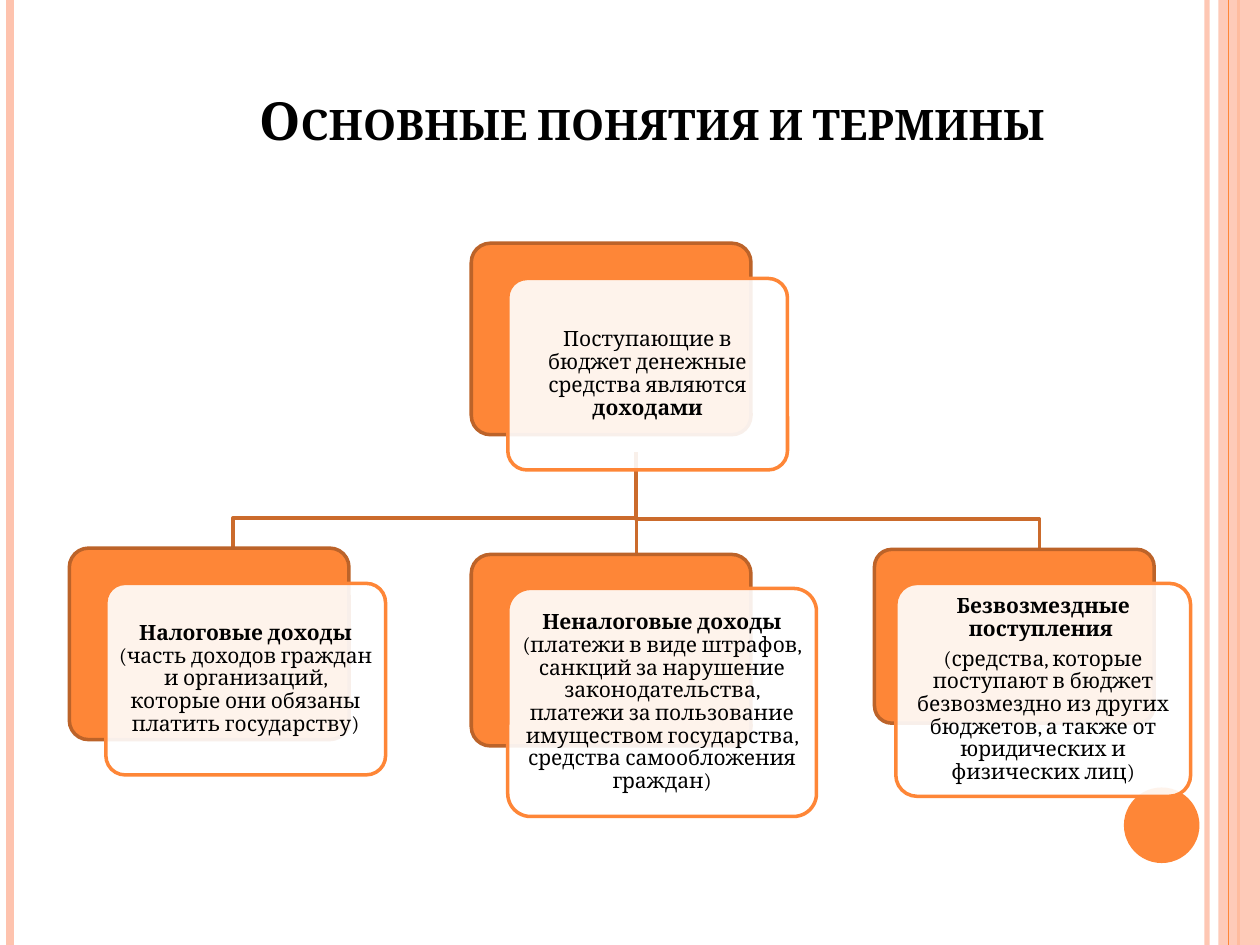
from lxml import etree
from pptx import Presentation
from pptx.dml.color import RGBColor
from pptx.enum.shapes import MSO_CONNECTOR, MSO_SHAPE
from pptx.enum.text import MSO_ANCHOR as Anchor, PP_ALIGN as Align
from pptx.oxml.ns import qn
from pptx.util import Inches, Pt

ORANGE, PEACH, WHITE, BLACK = "FE8637", "FEC3AE", "FFFFFF", "000000"
BACK_EDGE, BRANCH = "BC6329", "CB6B2C"
FONT = "Cambria"


def paint(color_format, color, opacity=100):
    """Set a solid fill or line colour; opacity is in percent."""
    color_format.solid()
    color_format.fore_color.rgb = RGBColor.from_string(color)
    if opacity < 100:
        solid = color_format.fore_color._xFill
        etree.SubElement(solid[0], qn("a:alpha")).set("val", str(opacity * 1000))


def add_block(slide, kind, box, fill, opacity=100, edge=None):
    block = slide.shapes.add_shape(kind, *map(Inches, box))
    block.shadow.inherit = False
    paint(block.fill, fill, opacity)
    if edge:
        paint(block.line.fill, edge)
        block.line.width = Pt(2)
    else:
        block.line.fill.background()
    return block


def add_line(slide, start, end, color, width, opacity=100):
    line = slide.shapes.add_connector(
        MSO_CONNECTOR.STRAIGHT, *map(Inches, (*start, *end)))
    paint(line.line.fill, color, opacity)
    line.line.width = Pt(width)
    etree.SubElement(line._element.spPr, qn("a:effectLst"))


def add_frame(slide, width, height):
    """Draw the stripes along both edges and the corner disc."""
    def stripe(x, color, weight, opacity=100):
        add_line(slide, (x, 0), (x, height), color, weight, opacity)

    stripe(width - 0.42, PEACH, 3, 93)
    stripe(0.08, PEACH, 4.5)
    stripe(width - 0.17, ORANGE, 1.5)
    add_block(slide, MSO_SHAPE.RECTANGLE, (width - 0.33, 0, 0.33, height), PEACH, 87)
    stripe(width - 0.25, ORANGE, 0.75)
    add_block(slide, MSO_SHAPE.OVAL, (width - 1.08, height - 1.25, 0.6, 0.6), ORANGE)


def format_run(run, size, bold):
    run.font.name = FONT
    run.font.size = Pt(size)
    run.font.bold = bold
    run.font.color.rgb = RGBColor.from_string(BLACK)


def add_title(slide, text, box):
    title = slide.shapes.title
    title.left, title.top, title.width, title.height = map(Inches, box)
    frame = title.text_frame
    frame.text = text
    frame.vertical_anchor = Anchor.BOTTOM
    paragraph = frame.paragraphs[0]
    paragraph.alignment = Align.CENTER
    run = paragraph.runs[0]
    format_run(run, 30, True)
    run.font._element.set("cap", "small")


def add_branches(slide, root, children):
    """Join the root point to each child point, turning above the children."""
    x, y = root
    for child_x, child_y in children:
        if child_x == x:
            add_line(slide, root, (child_x, child_y), BRANCH, 2)
            continue
        turn = child_y - 0.24
        builder = slide.shapes.build_freeform(Inches(x), Inches(y))
        corners = [(x, turn), (child_x, turn), (child_x, child_y)]
        builder.add_line_segments(
            [(Inches(cx), Inches(cy)) for cx, cy in corners], close=False)
        branch = builder.convert_to_shape()
        branch.shadow.inherit = False
        branch.fill.background()
        paint(branch.line.fill, BRANCH)
        branch.line.width = Pt(2)


def add_card(slide, back_box, front_box, paragraphs):
    """Draw a text card over its backing; paragraphs hold (text, bold) runs."""
    back = add_block(slide, MSO_SHAPE.ROUNDED_RECTANGLE, back_box, ORANGE, edge=BACK_EDGE)
    front = add_block(slide, MSO_SHAPE.ROUNDED_RECTANGLE, front_box, WHITE, 90, ORANGE)
    back.adjustments[0] = front.adjustments[0] = 0.1
    frame = front.text_frame
    frame.word_wrap = True
    frame.vertical_anchor = Anchor.MIDDLE
    frame.margin_left = frame.margin_right = Inches(0.05)
    frame.margin_top = frame.margin_bottom = Inches(0.1)
    for index, runs in enumerate(paragraphs):
        paragraph = frame.add_paragraph() if index else frame.paragraphs[0]
        paragraph.alignment = Align.CENTER
        paragraph.line_spacing = 0.9
        paragraph.space_after = Pt(4.2)
        for text, bold in runs:
            run = paragraph.add_run()
            run.text = text
            format_run(run, 12, bold)


CARDS = [
    ((3.74, 1.93, 2.22, 1.52), (4.03, 2.21, 2.22, 1.52),
     [[("Поступающие в бюджет денежные средства являются ", False),
       ("доходами", True)]]),
    ((0.55, 4.35, 2.22, 1.52), (0.84, 4.63, 2.22, 1.52),
     [[("Налоговые доходы ", True),
       ("(часть доходов граждан и организаций, которые они обязаны "
        "платить государству)", False)]]),
    ((3.74, 4.4, 2.22, 1.52), (4.03, 4.67, 2.45, 1.81),
     [[("Неналоговые доходы ", True),
       ("(платежи в виде штрафов, санкций за нарушение законодательства, "
        "платежи за пользование имуществом государства, средства "
        "самообложения граждан)", False)]]),
    ((6.94, 4.36, 2.22, 1.38), (7.11, 4.63, 2.34, 1.69),
     [[("Безвозмездные поступления ", True)],
      [("(средства, которые поступают в бюджет безвозмездно из других "
        "бюджетов, а также от юридических и физических лиц)", False)]]),
]


def main():
    width, height = 10, 7.5
    deck = Presentation()
    deck.slide_width, deck.slide_height = Inches(width), Inches(height)
    slide = deck.slides.add_slide(deck.slide_layouts[5])
    add_frame(slide, width, height)
    add_title(slide, "Основные понятия и термины", (0.7, 0.55, 8.95, 0.7))
    add_branches(slide, (5.05, 3.59), [(8.25, 4.36), (5.05, 4.4), (1.85, 4.35)])
    for back_box, front_box, paragraphs in CARDS:
        add_card(slide, back_box, front_box, paragraphs)
    deck.save("out.pptx")


if __name__ == "__main__":
    main()
